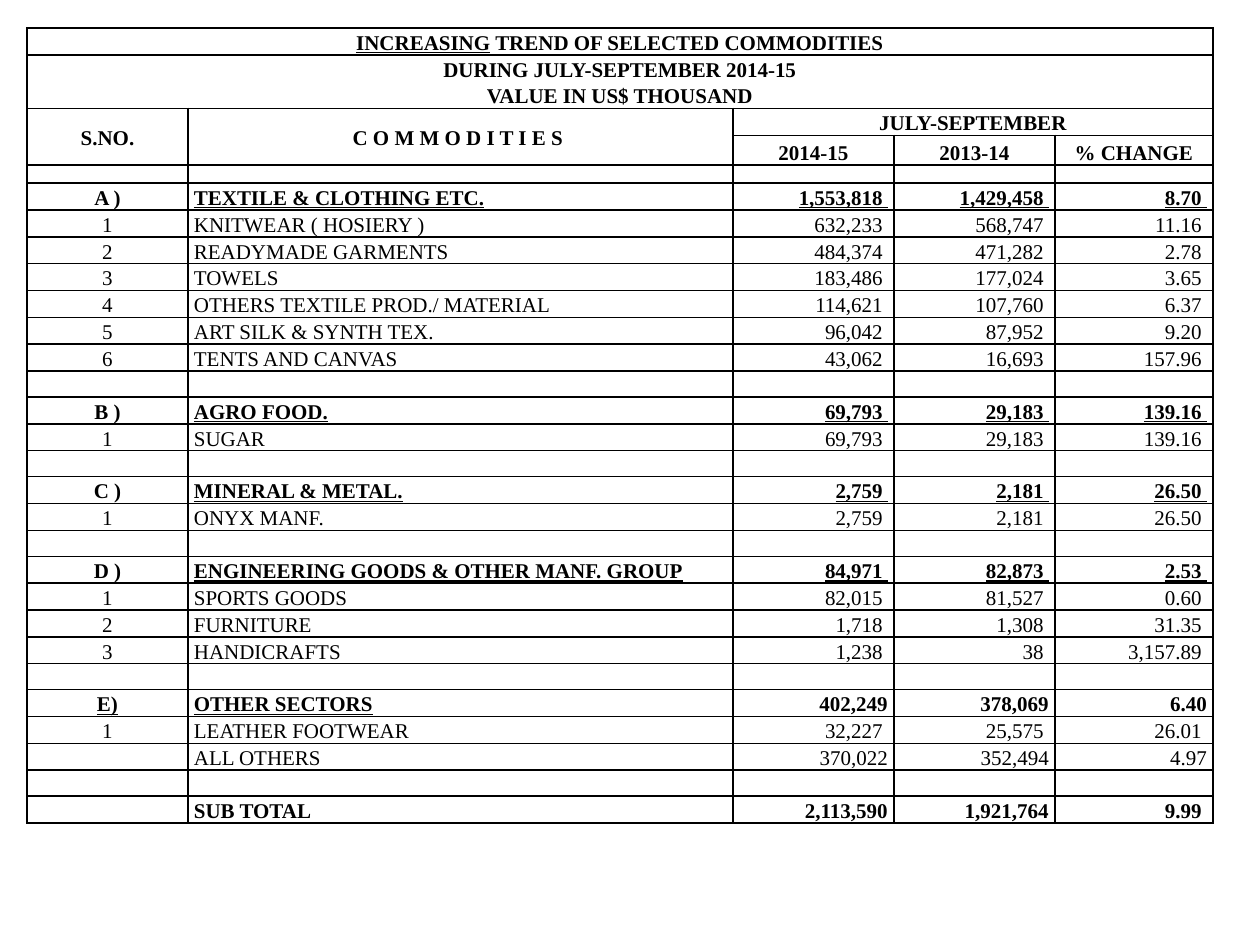
from dataclasses import dataclass
from lxml.etree import SubElement
from pptx import Presentation
from pptx.dml.color import RGBColor
from pptx.enum.text import MSO_VERTICAL_ANCHOR as Anchor, PP_PARAGRAPH_ALIGNMENT as Align
from pptx.oxml.ns import qn
from pptx.util import Emu, Pt

EMU_PER_PX = 914400 / 126
BLACK = RGBColor(0, 0, 0)
COLUMN_WIDTHS = [161, 545, 161, 161, 158]
ALIGNMENTS = [Align.CENTER, Align.LEFT, Align.RIGHT, Align.RIGHT, Align.RIGHT]
TEXT_HEIGHT, GAP_HEIGHT = 26, 26
HEADER_HEIGHTS = [TEXT_HEIGHT, 53, TEXT_HEIGHT, 30, 18]

BOLD = {"bold": True}
UNDERLINED = {"bold": True, "underline": True}
PLAIN = {"bold": False}
CELL_STYLES = {
    "item": [PLAIN] * 5,
    "group": [BOLD] + [UNDERLINED] * 4,
    "others": [UNDERLINED] * 2 + [BOLD] * 3,
    "total": [BOLD] * 5,
}
TIGHT_KINDS = ("others", "total")
TIGHT_COLUMNS = (2, 3)

HEADERS = [
    (0, 0, 0, 4, Anchor.BOTTOM, [[("INCREASING", UNDERLINED), (" TREND OF SELECTED COMMODITIES", BOLD)]]),
    (1, 0, 1, 4, Anchor.BOTTOM, [[("DURING JULY-SEPTEMBER 2014-15", BOLD)], [("VALUE IN US$ THOUSAND", BOLD)]]),
    (2, 0, 3, 0, Anchor.MIDDLE, [[("S.NO.", BOLD)]]),
    (2, 1, 3, 1, Anchor.MIDDLE, [[("C O M M O D I T I E S ", BOLD)]]),
    (2, 2, 2, 4, Anchor.BOTTOM, [[("JULY-SEPTEMBER", BOLD)]]),
    (3, 2, 3, 2, Anchor.BOTTOM, [[("2014-15", BOLD)]]),
    (3, 3, 3, 3, Anchor.BOTTOM, [[("2013-14", BOLD)]]),
    (3, 4, 3, 4, Anchor.BOTTOM, [[("% CHANGE", BOLD)]]),
]

GAP = ("gap", [])
COMMODITIES = [
    ("group", ["A )", "TEXTILE & CLOTHING ETC.", "1,553,818 ", "1,429,458 ", "8.70 "]),
    ("item", ["1", "KNITWEAR ( HOSIERY )", "632,233 ", "568,747 ", "11.16 "]),
    ("item", ["2", "READYMADE GARMENTS", "484,374 ", "471,282 ", "2.78 "]),
    ("item", ["3", "TOWELS", "183,486 ", "177,024 ", "3.65 "]),
    ("item", ["4", "OTHERS TEXTILE PROD./ MATERIAL", "114,621 ", "107,760 ", "6.37 "]),
    ("item", ["5", "ART SILK & SYNTH TEX.", "96,042 ", "87,952 ", "9.20 "]),
    ("item", ["6", "TENTS AND CANVAS", "43,062 ", "16,693 ", "157.96 "]),
    GAP,
    ("group", ["B )", "AGRO FOOD.", "69,793 ", "29,183 ", "139.16 "]),
    ("item", ["1", "SUGAR", "69,793 ", "29,183 ", "139.16 "]),
    GAP,
    ("group", ["C )", "MINERAL & METAL.", "2,759 ", "2,181 ", "26.50 "]),
    ("item", ["1", "ONYX MANF.", "2,759 ", "2,181 ", "26.50 "]),
    GAP,
    ("group", ["D )", "ENGINEERING GOODS & OTHER MANF. GROUP", "84,971 ", "82,873 ", "2.53 "]),
    ("item", ["1", "SPORTS GOODS", "82,015 ", "81,527 ", "0.60 "]),
    ("item", ["2", "FURNITURE", "1,718 ", "1,308 ", "31.35 "]),
    ("item", ["3", "HANDICRAFTS", "1,238 ", "38 ", "3,157.89 "]),
    GAP,
    ("others", ["E)", "OTHER SECTORS", "402,249 ", "378,069 ", "6.40"]),
    ("item", ["1", "LEATHER FOOTWEAR", "32,227 ", "25,575 ", "26.01 "]),
    ("item", ["", "ALL OTHERS", "370,022", "352,494", "4.97"]),
    GAP,
    ("total", ["", "SUB TOTAL", "2,113,590 ", "1,921,764 ", "9.99 "]),
]


def px(length):
    return Emu(round(length * EMU_PER_PX))


def apply(target, values):
    for name, value in values.items():
        setattr(target, name, value)


@dataclass
class PageBuilder:
    page: object
    font_name: str = "Times New Roman"
    font_size: int = 12
    empty_size: int = 6
    line_spacing: float = 1.15

    def table(self, left, top, widths, heights):
        frame = self.page.shapes.add_table(
            len(heights), len(widths), px(left), px(top), px(sum(widths)), px(sum(heights)))
        table = frame.table
        apply(table, {"first_row": False, "horz_banding": False})
        for column, width in zip(table.columns, widths):
            column.width = px(width)
        for row, height in zip(table.rows, heights):
            row.height = px(height)
        for cell in table.iter_cells():
            self.blank(cell)
        return table

    def blank(self, cell):
        apply(cell, {"margin_left": px(6), "margin_right": px(6), "margin_top": 0, "margin_bottom": 0})
        properties = cell._tc.get_or_add_tcPr()
        for side in ("lnL", "lnR", "lnT", "lnB"):
            line = SubElement(properties, qn(f"a:{side}"), w=str(Pt(1)))
            fill = SubElement(line, qn("a:solidFill"))
            SubElement(fill, qn("a:srgbClr"), val=str(BLACK))
        cell.fill.background()
        para = cell.text_frame.paragraphs[0]
        SubElement(para._p, qn("a:endParaRPr"), sz=str(self.empty_size * 100))

    def text(self, cell, lines, alignment, anchor=Anchor.BOTTOM, tight=False):
        cell.vertical_anchor = anchor
        if tight:
            apply(cell, {"margin_left": px(1), "margin_right": px(1), "margin_top": px(1)})
        frame = cell.text_frame
        for index, spans in enumerate(lines):
            para = frame.add_paragraph() if index else frame.paragraphs[0]
            apply(para, {"alignment": alignment, "line_spacing": 1.0 if tight else self.line_spacing})
            for words, style in spans:
                span = para.add_run()
                span.text = words
                apply(span.font, {"name": self.font_name, "size": Pt(self.font_size), **style})
                span.font.color.rgb = BLACK


def main():
    deck = Presentation()
    apply(deck, {"slide_width": px(1260), "slide_height": px(945)})
    builder = PageBuilder(deck.slides.add_slide(deck.slide_layouts[6]))
    heights = HEADER_HEIGHTS + [GAP_HEIGHT if kind == "gap" else TEXT_HEIGHT for kind, _ in COMMODITIES]
    table = builder.table(27, 28, COLUMN_WIDTHS, heights)

    for top, left, bottom, right, anchor, lines in HEADERS:
        cell = table.cell(top, left)
        if (top, left) != (bottom, right):
            cell.merge(table.cell(bottom, right))
        builder.text(cell, lines, Align.CENTER, anchor)

    for row, (kind, values) in enumerate(COMMODITIES, len(HEADER_HEIGHTS)):
        for column, words in enumerate(values):
            if words:
                tight = kind in TIGHT_KINDS and column in TIGHT_COLUMNS
                line = [(words, CELL_STYLES[kind][column])]
                builder.text(table.cell(row, column), [line], ALIGNMENTS[column], tight=tight)

    deck.save("out.pptx")


if __name__ == "__main__":
    main()
